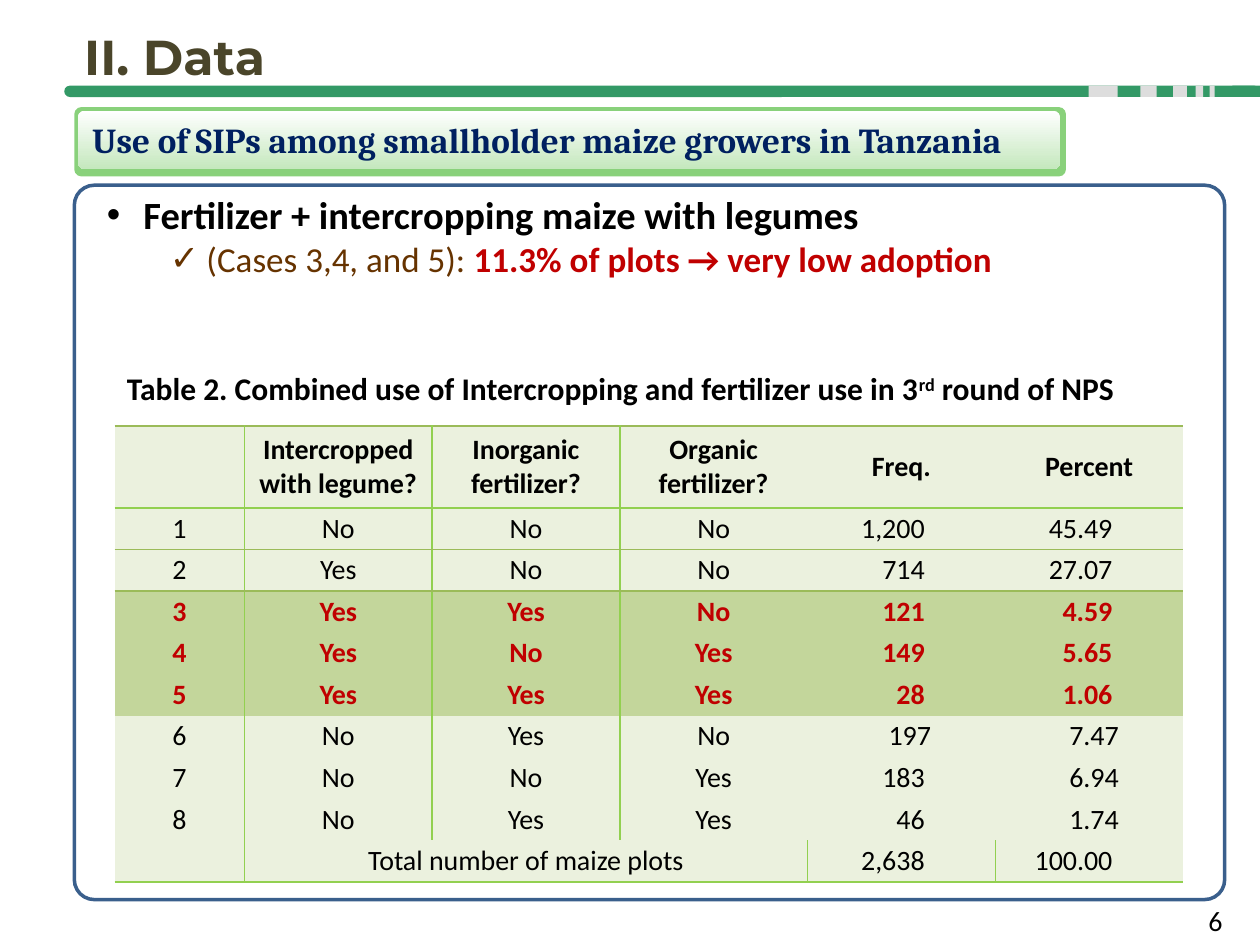
from dataclasses import dataclass

from lxml import etree
from pptx import Presentation
from pptx import util as u
from pptx.dml.color import RGBColor
from pptx.enum import shapes, text
from pptx.oxml.ns import qn

Inches, Pt = u.Inches, u.Pt
Align, Anchor, Shape = text.PP_ALIGN, text.MSO_ANCHOR, shapes.MSO_SHAPE


@dataclass(frozen=True)
class Theme:
    body: str = "Calibri"
    heading: str = "Montserrat"
    banner: str = "Cambria"
    black: str = "000000"
    olive: str = "4A452A"
    navy: str = "002060"
    brown: str = "663300"
    red: str = "C00000"
    strip: str = "339966"
    strip_mark: str = "DDDDDD"
    frame: str = "3A5F8C"
    banner_edge: str = "89D17B"
    banner_top: str = "FFFFFF"
    banner_bottom: str = "C5E8BE"
    row: str = "EBF1DE"
    row_marked: str = "C3D69B"
    rule: str = "92D050"
    rule_dark: str = "9BBB59"
    title_size: int = 28
    point_size: int = 22
    detail_size: int = 20
    caption_size: int = 18
    small_size: int = 16


THEME = Theme()
NO_STYLE = "{2D5ABB26-0587-4C30-8999-92F81FD0307C}"


def write(paragraph, words, size=THEME.small_size, font=THEME.body, color=THEME.black,
          bold=False, align=None, raised=False):
    """Append words to a paragraph; a newline becomes a line break."""
    if align is not None:
        paragraph.alignment = align
    for i, line in enumerate(words.split("\n")):
        if i:
            paragraph.add_line_break()
        run = paragraph.add_run()
        run.text = line
        run.font.name, run.font.size, run.font.bold = font, Pt(size), bold
        run.font.color.rgb = RGBColor.from_string(color)
        if raised:
            run.font._element.set("baseline", "30000")


def add_bullet(paragraph, mark, left, hang=0.29):
    props = paragraph._p.get_or_add_pPr()
    props.set("marL", str(Inches(left)))
    props.set("indent", str(-Inches(hang)))
    etree.SubElement(props, qn("a:buFont")).set("typeface", "Arial")
    etree.SubElement(props, qn("a:buChar")).set("char", mark)


def set_borders(cell, borders):
    """Draw the sides named in borders, a dict of side letter to colour."""
    props = cell._tc.get_or_add_tcPr()
    sides = [side for side in "LRTB" if side in borders]
    for i, side in enumerate(sides):
        line = etree.Element(qn("a:ln" + side), w=str(Pt(1)))
        fill = etree.SubElement(line, qn("a:solidFill"))
        etree.SubElement(fill, qn("a:srgbClr")).set("val", borders[side])
        props.insert(i, line)


class SlideBuilder:
    def __init__(self, slide, theme):
        self.slide, self.theme = slide, theme

    def shape(self, kind, box, fill=None, gradient=None, line=None, corner=None):
        shape = self.slide.shapes.add_shape(kind, *map(Inches, box))
        shape.shadow.inherit = False
        if corner is not None:
            shape.adjustments[0] = corner
        if gradient:
            shape.fill.gradient()
            shape.fill.gradient_angle = 270
            for stop, position, color in zip(shape.fill.gradient_stops, (0, 1), gradient):
                stop.position = position
                stop.color.rgb = RGBColor.from_string(color)
        elif fill:
            shape.fill.solid()
            shape.fill.fore_color.rgb = RGBColor.from_string(fill)
        else:
            shape.fill.background()
        if line:
            shape.line.color.rgb = RGBColor.from_string(line)
            shape.line.width = Pt(2)
        else:
            shape.line.fill.background()
        return shape

    def text_box(self, box, anchor=Anchor.TOP):
        frame = self.slide.shapes.add_textbox(*map(Inches, box)).text_frame
        frame.word_wrap = True
        frame.vertical_anchor = anchor
        return frame

    def table(self, box, widths, heights):
        table = self.slide.shapes.add_table(
            len(heights), len(widths), *map(Inches, box)).table
        table.first_row = table.horz_banding = False
        table._tbl.tblPr.find(qn("a:tableStyleId")).text = NO_STYLE
        for column, width in zip(table.columns, widths):
            column.width = Inches(width)
        for row, height in zip(table.rows, heights):
            row.height = Inches(height)
        return table

    def cell(self, cell, words, fill, borders, right=0.07, **style):
        cell.fill.solid()
        cell.fill.fore_color.rgb = RGBColor.from_string(fill)
        cell.vertical_anchor = Anchor.MIDDLE
        cell.margin_left, cell.margin_right = Inches(0.07), Inches(right)
        cell.margin_top = cell.margin_bottom = 0
        write(cell.text_frame.paragraphs[0], words, **style)
        set_borders(cell, borders)


HEADER = ["", "Intercropped\nwith legume?", "Inorganic\nfertilizer?",
          "Organic\nfertilizer?", "Freq.", "Percent"]
CASES = [
    ["1", "No", "No", "No", "1,200 ", "45.49 "],
    ["2", "Yes", "No", "No", "714 ", "27.07 "],
    ["3", "Yes", "Yes", "No", "121 ", "4.59 "],
    ["4", "Yes", "No", "Yes", "149 ", "5.65 "],
    ["5", "Yes", "Yes", "Yes", "28 ", "1.06 "],
    ["6", "No", "Yes", "No", "197", "7.47"],
    ["7", "No", "No", "Yes", "183 ", "6.94"],
    ["8", "No", "Yes", "Yes", "46 ", "1.74"],
]
TOTAL = ["", "Total number of maize plots", "", "", "2,638 ", "100.00 "]
MARKED_CASES = {3, 4, 5}


def add_adoption_table(builder):
    theme = builder.theme
    rows = [HEADER, *CASES, TOTAL]
    last = len(rows) - 1
    table = builder.table((0.91, 3.38, 8.5, 3.6), [1.03] + [1.49] * 5, [0.65] + [0.33] * last)
    table.cell(last, 1).merge(table.cell(last, 3))
    tops = {0: theme.rule_dark, 1: theme.rule, 2: theme.rule_dark}
    bottoms = {0: theme.rule, 1: theme.rule_dark, last: theme.rule}
    for r, row in enumerate(rows):
        marked = r in MARKED_CASES
        # Upright rules stand after these columns
        ruled = {0, 3} if r == last else {0, 1}
        for c, words in enumerate(row):
            borders = {side: lines[r] for side, lines in (("T", tops), ("B", bottoms)) if r in lines}
            if c in ruled or (r == last and c == 1):
                borders["R"] = theme.rule
            if c - 1 in ruled:
                borders["L"] = theme.rule
            number = r > 0 and c > 3
            builder.cell(table.cell(r, c), words, theme.row_marked if marked else theme.row,
                         borders, right=0.51 if number else 0.07,
                         color=theme.red if marked else theme.black,
                         bold=marked or r == 0,
                         align=Align.RIGHT if number else Align.CENTER)


def main():
    deck = Presentation()
    deck.slide_width, deck.slide_height = Inches(10), Inches(7.5)
    theme = THEME
    builder = SlideBuilder(deck.slides.add_slide(deck.slide_layouts[6]), theme)

    # Strip under the title
    builder.shape(Shape.ROUNDED_RECTANGLE, (0.51, 0.68, 9.49, 0.09), theme.strip, corner=0.5)
    builder.shape(Shape.RECTANGLE, (9.78, 0.68, 0.22, 0.09), theme.strip)
    for left, width in ((8.64, 0.23), (9.05, 0.13), (9.31, 0.11), (9.49, 0.06), (9.6, 0.04)):
        builder.shape(Shape.RECTANGLE, (left, 0.68, width, 0.09), theme.strip_mark)

    # Slide number
    number = builder.text_box((7.47, 7.12, 2.33, 0.4))
    write(number.paragraphs[0], "6", align=Align.RIGHT)

    # Frame, table and caption
    builder.shape(Shape.ROUNDED_RECTANGLE, (0.59, 1.47, 9.13, 5.67), line=theme.frame, corner=0.028)
    add_adoption_table(builder)
    caption = builder.text_box((0.91, 2.88, 8.66, 0.4)).paragraphs[0]
    for words, raised in (
            ("Table 2. Combined use of Intercropping and fertilizer use in 3", False),
            ("rd", True), (" round of NPS", False)):
        write(caption, words, size=theme.caption_size, bold=True, raised=raised)

    # Findings
    findings = builder.text_box((0.75, 1.47, 8.98, 0.81))
    point, detail = findings.paragraphs[0], findings.add_paragraph()
    add_bullet(point, "•", 0.29)
    write(point, "Fertilizer + intercropping maize with legumes", size=theme.point_size, bold=True)
    detail.level = 1
    add_bullet(detail, "✓", 0.79)
    write(detail, "(Cases 3,4, and 5): ", size=theme.detail_size, color=theme.brown)
    write(detail, "11.3% of plots → very low adoption", size=theme.detail_size,
          color=theme.red, bold=True)

    # Banner
    builder.shape(Shape.ROUNDED_RECTANGLE, (0.59, 0.85, 7.87, 0.55), theme.banner_edge, corner=0.1)
    banner = builder.shape(Shape.ROUNDED_RECTANGLE, (0.62, 0.88, 7.79, 0.46), corner=0.1,
                           gradient=(theme.banner_top, theme.banner_bottom)).text_frame
    banner.vertical_anchor = Anchor.MIDDLE
    write(banner.paragraphs[0], "Use of SIPs among smallholder maize growers in Tanzania",
          size=theme.detail_size, font=theme.banner, color=theme.navy, bold=True, align=Align.LEFT)

    # Title
    title = builder.text_box((0.57, 0.24, 9.15, 0.4), Anchor.MIDDLE)
    write(title.paragraphs[0], "II. Data", size=theme.title_size, font=theme.heading,
          color=theme.olive, bold=True)

    deck.save("out.pptx")


if __name__ == "__main__":
    main()
